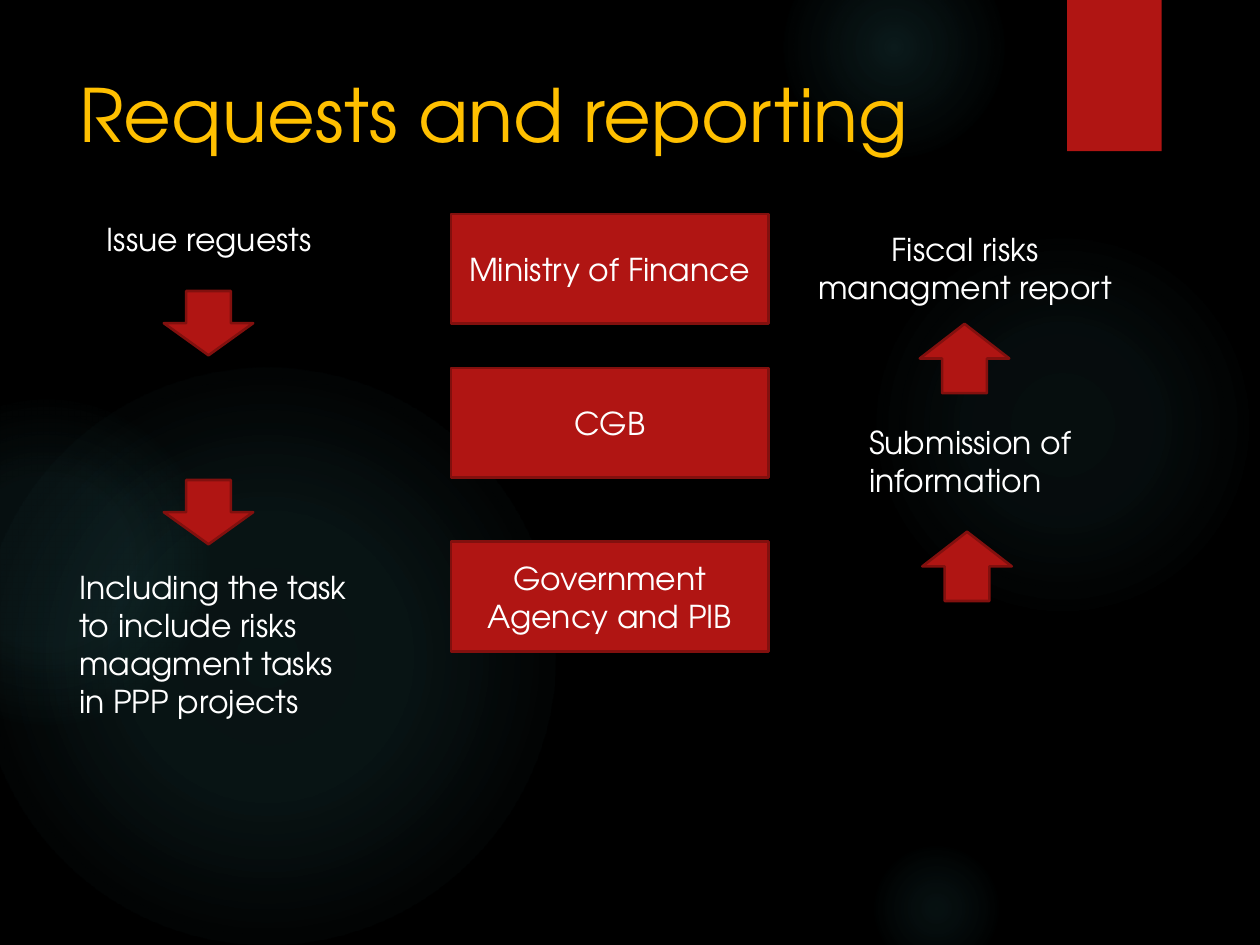
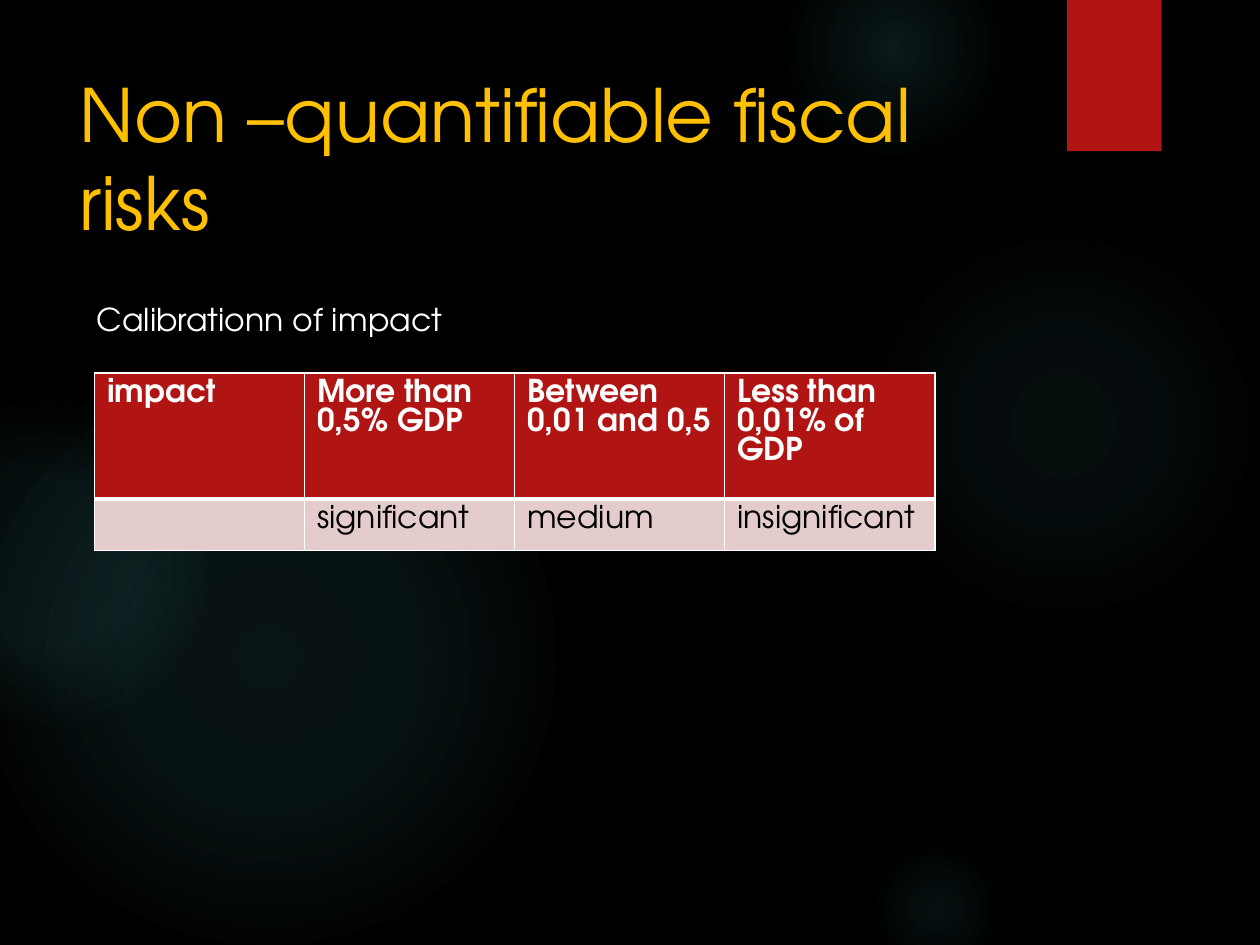
from pptx import Presentation
from pptx.dml.color import RGBColor
from pptx.enum import shapes, text
from pptx.oxml import parse_xml
from pptx.oxml.ns import nsdecls
from pptx.util import Inches, Pt

HUES = {"back": "000000", "glow": "50B9C1", "red": "B01513", "edge": "82100E",
        "title": "FFC000", "white": "FFFFFF", "pale": "E4CCCC", "black": "000000"}
RGB = {name: RGBColor.from_string(hue) for name, hue in HUES.items()}
FONT = "TeX Gyre Adventor"
KIND = shapes.MSO_SHAPE
LEFT, MID = text.PP_ALIGN.LEFT, text.PP_ALIGN.CENTER

# left, top, size, then (position, opacity) of each gradient stop in percent
GLOWS = [
    (6.89, 1.83, 3.08, [(0, 7), (36, 6), (69, 0)]),
    (6.22, -0.5, 1.75, [(0, 14), (36, 7), (73, 0)]),
    (6.89, 6.67, 1.08, [(0, 9), (36, 5), (66, 0)]),
    (-0.17, 2.92, 4.58, [(0, 11), (36, 10), (75, 0)]),
    (-0.92, 3.17, 2.58, [(0, 8), (36, 8), (72, 0)]),
]


def write(frame, words, align=LEFT, **style):
    """Set the words of a text frame; style overrides the body font."""
    frame.word_wrap = True
    para = frame.paragraphs[0]
    para.alignment = align
    run = para.add_run()
    run.text = words
    look = {"name": FONT, "size": Pt(18), "bold": False, "color": "white"} | style
    run.font.color.rgb = RGB[look.pop("color")]
    for key, value in look.items():
        setattr(run.font, key, value)


def draw(slide, kind, box, fill=None, edge=None):
    """Add a flat preset shape with an optional fill and outline."""
    shape = slide.shapes.add_shape(kind, *map(Inches, box))
    shape.shadow.inherit = False
    if fill:
        shape.fill.solid()
        shape.fill.fore_color.rgb = RGB[fill]
    if edge:
        shape.line.color.rgb = RGB[edge]
        shape.line.width = Pt(1.5)
    else:
        shape.line.fill.background()
    return shape


deck = Presentation()
deck.slide_width, deck.slide_height = Inches(10), Inches(7.5)

# Background, red tab, title and loose text of both slides
PAGES = [
    ("Requests and reporting", [
        ("Issue reguests", (0.75, 1.7, 2.13, 0.4), LEFT),
        ("Including the task to include risks maagment tasks in PPP projects",
         (0.53, 4.46, 2.34, 1.31), LEFT),
        ("Fiscal risks managment report", (6.36, 1.78, 2.6, 0.71), MID),
        ("Submission of information", (6.8, 3.31, 2.46, 0.71), LEFT),
    ]),
    ("Non –quantifiable fiscal risks", [
        ("Calibrationn of impact", (0.67, 2.33, 3.23, 0.4), LEFT),
    ]),
]
slides = []
for title, notes in PAGES:
    slide = deck.slides.add_slide(deck.slide_layouts[6])
    slides.append(slide)
    slide.background.fill.solid()
    slide.background.fill.fore_color.rgb = RGB["back"]
    for left, top, size, stops in GLOWS:
        glow = draw(slide, KIND.OVAL, (left, top, size, size))
        marks = "".join(
            f'<a:gs pos="{pos * 1000}"><a:srgbClr val="{HUES["glow"]}">'
            f'<a:alpha val="{alpha * 1000}"/></a:srgbClr></a:gs>'
            for pos, alpha in stops)
        grad = parse_xml(
            f'<a:gradFill {nsdecls("a")}><a:gsLst>{marks}</a:gsLst><a:path path="circle">'
            '<a:fillToRect l="50000" t="50000" r="50000" b="50000"/></a:path></a:gradFill>')
        glow.element.spPr.insert(2, grad)
    draw(slide, KIND.RECTANGLE, (8.47, 0, 0.75, 1.2), "red")
    head = slide.shapes.add_textbox(*map(Inches, (0.53, 0.5, 7.72, 1.53)))
    write(head.text_frame, title, size=Pt(42), color="title")
    for words, box, align in notes:
        note = slide.shapes.add_textbox(*map(Inches, box))
        write(note.text_frame, words, align)
        note.text_frame.auto_size = text.MSO_AUTO_SIZE.SHAPE_TO_FIT_TEXT

flow, risks = slides

# Slide 1: bodies in the middle, requests going down, reports going up
for words, top in [("Ministry of Finance", 1.7), ("CGB", 2.92),
                   ("Government Agency and PIB", 4.3)]:
    body = draw(flow, KIND.RECTANGLE, (3.58, top, 2.52, 0.87), "red", "edge")
    write(body.text_frame, words, MID)
for kind, left, top, tall in [(KIND.DOWN_ARROW, 1.3, 2.31, 0.51),
                              (KIND.DOWN_ARROW, 1.3, 3.81, 0.51),
                              (KIND.UP_ARROW, 7.3, 2.57, 0.55),
                              (KIND.UP_ARROW, 7.32, 4.22, 0.55)]:
    draw(flow, kind, (left, top, 0.71, tall), "red", "edge")

# Slide 2: impact scale
ROWS = [["impact", "More than 0,5% GDP", "Between 0,01 and 0,5", "Less than 0,01% of GDP"],
        ["", "significant", "medium", "insignificant"]]
LOOKS = [{"fill": "red", "color": "white", "bold": True},
         {"fill": "pale", "color": "black", "bold": False}]
grid = risks.shapes.add_table(2, 4, *map(Inches, (0.75, 2.96, 6.67, 0.82))).table
for r, (row, look) in enumerate(zip(ROWS, LOOKS)):
    grid.rows[r].height = Inches(0.41)
    for c, words in enumerate(row):
        cell = grid.cell(r, c)
        cell.fill.solid()
        cell.fill.fore_color.rgb = RGB[look["fill"]]
        if words:
            write(cell.text_frame, words, color=look["color"], bold=look["bold"])
        # The rule between the two rows is thicker than the others
        wide = {"L": 1, "R": 1, "T": 3 if r else 1, "B": 1 if r else 3}
        for spot, (side, width) in enumerate(wide.items()):
            rule = parse_xml(
                f'<a:ln{side} {nsdecls("a")} w="{Pt(width)}"><a:solidFill>'
                f'<a:srgbClr val="{HUES["white"]}"/></a:solidFill></a:ln{side}>')
            cell._tc.get_or_add_tcPr().insert(spot, rule)

deck.save("out.pptx")
